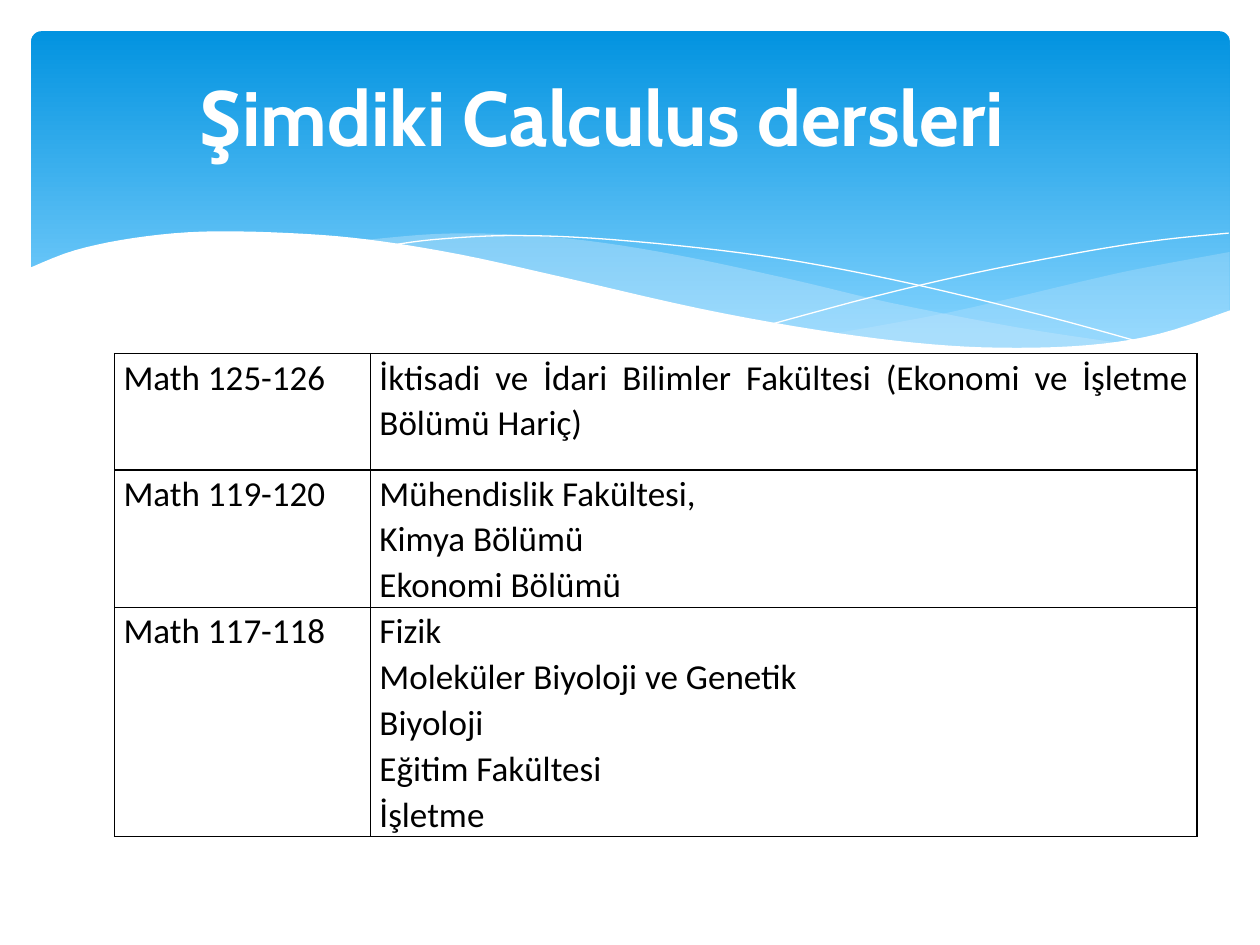
"""Build the slide that lists the current Calculus courses and their faculties."""
import dataclasses
import typing

import lxml.etree
import pptx
import pptx.dml.color
import pptx.enum.shapes
import pptx.enum.text
import pptx.oxml.ns
import pptx.util

Cm = pptx.util.Cm
Pt = pptx.util.Pt
qn = pptx.oxml.ns.qn
Point = tuple[float, float]


@dataclasses.dataclass(frozen=True)
class Theme:
    """Colours, fonts and type sizes of the slide."""

    banner_top: str = "0293E0"
    banner_bottom: str = "83D3FE"
    wave: str = "C6E7FC"
    white: str = "FFFFFF"
    ink: str = "000000"
    title_font: str = "Cabin"
    body_font: str = "Calibri"
    title_size: int = 44
    body_size: int = 20
    border_width: int = 1


@dataclasses.dataclass(frozen=True)
class Wave:
    """A filled outline of smooth curves joined end to end, or an open line."""

    curves: tuple[tuple[Point, ...], ...]
    colour: str
    opacity: int = 100
    filled: bool = True


@dataclasses.dataclass(frozen=True)
class Course:
    """A course pair, the departments that take it and its row height in cm."""

    code: str
    departments: tuple[str, ...]
    height: float


THEME = Theme()

WAVES = (
    Wave((
        ((24.79, 5.08), (23.01, 5.41), (21.87, 5.66), (19.13, 6.3), (16.79, 6.73)),
        ((16.79, 6.73), (18.59, 6.96), (20.68, 7.06), (22.38, 6.93), (23.75, 6.65),
         (24.79, 6.27)),
    ), THEME.wave, 29),
    Wave((
        ((7.26, 4.85), (8.74, 4.72), (10.13, 4.72), (11.81, 4.85), (13.74, 5.16),
         (15.98, 5.64), (17.93, 6.1), (20.5, 6.6), (22.68, 6.93)),
        ((22.68, 6.93), (20.78, 7.06), (19, 7.01), (16.89, 6.76), (14.38, 6.3),
         (11.4, 5.64), (9.19, 5.16), (7.26, 4.85)),
    ), THEME.wave, 40),
    Wave((
        ((7.85, 4.95), (8.74, 4.83), (10.19, 4.75), (11.91, 4.8), (14.12, 5),
         (16.15, 5.28), (18.47, 5.74), (21.11, 6.38), (23.04, 6.91)),
    ), THEME.white, filled=False),
    Wave((
        ((15.57, 6.53), (17.65, 5.97), (19.71, 5.49), (22, 5.05), (23.47, 4.83),
         (24.77, 4.7)),
    ), THEME.white, filled=False),
    Wave((
        ((24.82, 6.25), (23.37, 6.73), (21.92, 6.96), (20.14, 7.01), (18.44, 6.91),
         (16.46, 6.65), (14.1, 6.22), (11.35, 5.59), (9.27, 5.13), (7.42, 4.83),
         (5.84, 4.7), (4.09, 4.67), (2.69, 4.8), (1.5, 5.05), (0.58, 5.41)),
        ((0.58, 8.36), (24.82, 8.36)),
    ), THEME.white),
)

COURSES = (
    Course("Math 125-126", (
        "İktisadi ve İdari Bilimler Fakültesi (Ekonomi ve İşletme Bölümü Hariç)",
    ), 2.34),
    Course("Math 119-120", ("Mühendislik Fakültesi,", "Kimya Bölümü", "Ekonomi Bölümü"), 2.77),
    Course("Math 117-118", (
        "Fizik", "Moleküler Biyoloji ve Genetik", "Biyoloji", "Eğitim Fakültesi", "İşletme",
    ), 4.62),
)
COLUMN_WIDTHS = (5.16, 16.66)


def rgb(colour: str) -> pptx.dml.color.RGBColor:
    """Turn a hex string into a colour."""
    return pptx.dml.color.RGBColor.from_string(colour)


def apply(target: typing.Any, values: dict[str, typing.Any]) -> None:
    """Set each named attribute of the target."""
    for attribute, value in values.items():
        setattr(target, attribute, value)


def smooth(knots: tuple[Point, ...], steps: int = 5) -> list[Point]:
    """Sample a Catmull-Rom curve through the knots."""
    padded = (knots[0], *knots, knots[-1])
    samples = [knots[0]]
    for before, start, end, after in zip(padded, padded[1:], padded[2:], padded[3:]):
        for step in range(1, steps + 1):
            t = step / steps
            samples.append(tuple(
                0.5 * (2 * b + (c - a) * t + (2 * a - 5 * b + 4 * c - d) * t**2
                       + (3 * b - a - 3 * c + d) * t**3)
                for a, b, c, d in zip(before, start, end, after)
            ))
    return samples


def draw_banner(shapes: typing.Any) -> None:
    """Draw the rounded banner with its vertical gradient."""
    banner = shapes.add_shape(
        pptx.enum.shapes.MSO_SHAPE.ROUNDED_RECTANGLE, Cm(0.63), Cm(0.63), Cm(24.16), Cm(6.86)
    )
    banner.adjustments[0] = 0.03
    banner.shadow.inherit = False
    banner.line.fill.background()
    banner.fill.gradient()
    banner.fill.gradient_angle = 270
    stops = ((0, THEME.banner_top), (0.9, THEME.banner_bottom))
    for stop, (position, colour) in zip(banner.fill.gradient_stops, stops):
        stop.position = position
        stop.color.rgb = rgb(colour)


def draw_wave(shapes: typing.Any, wave: Wave) -> None:
    """Draw one wave as a filled area or a hairline."""
    points = [(Cm(x), Cm(y)) for curve in wave.curves for x, y in smooth(curve)]
    builder = shapes.build_freeform(*points[0])
    builder.add_line_segments(points[1:], close=wave.filled)
    outline = builder.convert_to_shape()
    outline.shadow.inherit = False
    if not wave.filled:
        outline.fill.background()
        outline.line.color.rgb = rgb(wave.colour)
        outline.line.width = Pt(0)
        return
    outline.line.fill.background()
    outline.fill.solid()
    outline.fill.fore_color.rgb = rgb(wave.colour)
    if wave.opacity < 100:
        colour = outline.element.spPr.find(qn("a:solidFill")).find(qn("a:srgbClr"))
        lxml.etree.SubElement(colour, qn("a:alpha"), val=str(wave.opacity * 1000))


def add_borders(cell: typing.Any) -> None:
    """Give a cell a solid border on all four sides."""
    properties = cell._tc.get_or_add_tcPr()
    for index, side in enumerate(("lnL", "lnR", "lnT", "lnB")):
        border = lxml.etree.Element(qn(f"a:{side}"), w=str(Pt(THEME.border_width)))
        fill = lxml.etree.SubElement(border, qn("a:solidFill"))
        lxml.etree.SubElement(fill, qn("a:srgbClr"), val=THEME.ink)
        properties.insert(index, border)


def fill_cell(cell: typing.Any, lines: tuple[str, ...]) -> None:
    """Write and format the lines of one cell."""
    apply(cell, {"margin_left": Cm(0.18), "margin_right": Cm(0.18),
                 "margin_top": 0, "margin_bottom": 0, "text": "\n".join(lines)})
    cell.fill.background()
    add_borders(cell)
    for paragraph in cell.text_frame.paragraphs:
        apply(paragraph, {"alignment": pptx.enum.text.PP_ALIGN.JUSTIFY, "line_spacing": 1.07})
        apply(paragraph.runs[0].font, {"name": THEME.body_font, "size": Pt(THEME.body_size)})
        paragraph.runs[0].font.color.rgb = rgb(THEME.ink)


def draw_courses(shapes: typing.Any) -> None:
    """Draw the table of courses and departments."""
    height = sum(course.height for course in COURSES)
    table = shapes.add_table(len(COURSES), len(COLUMN_WIDTHS), Cm(2.31), Cm(7.13),
                             Cm(sum(COLUMN_WIDTHS)), Cm(height)).table
    apply(table, {"first_row": False, "horz_banding": False})
    for column, width in zip(table.columns, COLUMN_WIDTHS):
        column.width = Cm(width)
    for row, course in zip(table.rows, COURSES):
        row.height = Cm(course.height)
        for cell, lines in zip(row.cells, ((course.code,), course.departments)):
            fill_cell(cell, lines)


def place_title(title: typing.Any) -> None:
    """Place the title in front of the banner and format it."""
    title.element.getparent().append(title.element)
    apply(title, {"left": Cm(0.71), "top": Cm(0.74), "width": Cm(22.86), "height": Cm(3.18)})
    apply(title.text_frame, {"text": "Şimdiki Calculus dersleri", "word_wrap": True,
                             "vertical_anchor": pptx.enum.text.MSO_ANCHOR.MIDDLE})
    paragraph = title.text_frame.paragraphs[0]
    paragraph.alignment = pptx.enum.text.PP_ALIGN.CENTER
    font = paragraph.runs[0].font
    apply(font, {"name": THEME.title_font, "size": Pt(THEME.title_size), "bold": True})
    font.color.rgb = rgb(THEME.white)


def main() -> None:
    """Build and save the presentation."""
    deck = pptx.Presentation()
    apply(deck, {"slide_width": Cm(25.4), "slide_height": Cm(19.05)})
    slide = deck.slides.add_slide(deck.slide_layouts[5])
    draw_banner(slide.shapes)
    for wave in WAVES:
        draw_wave(slide.shapes, wave)
    draw_courses(slide.shapes)
    place_title(slide.shapes.title)
    deck.save("out.pptx")


if __name__ == "__main__":
    main()
